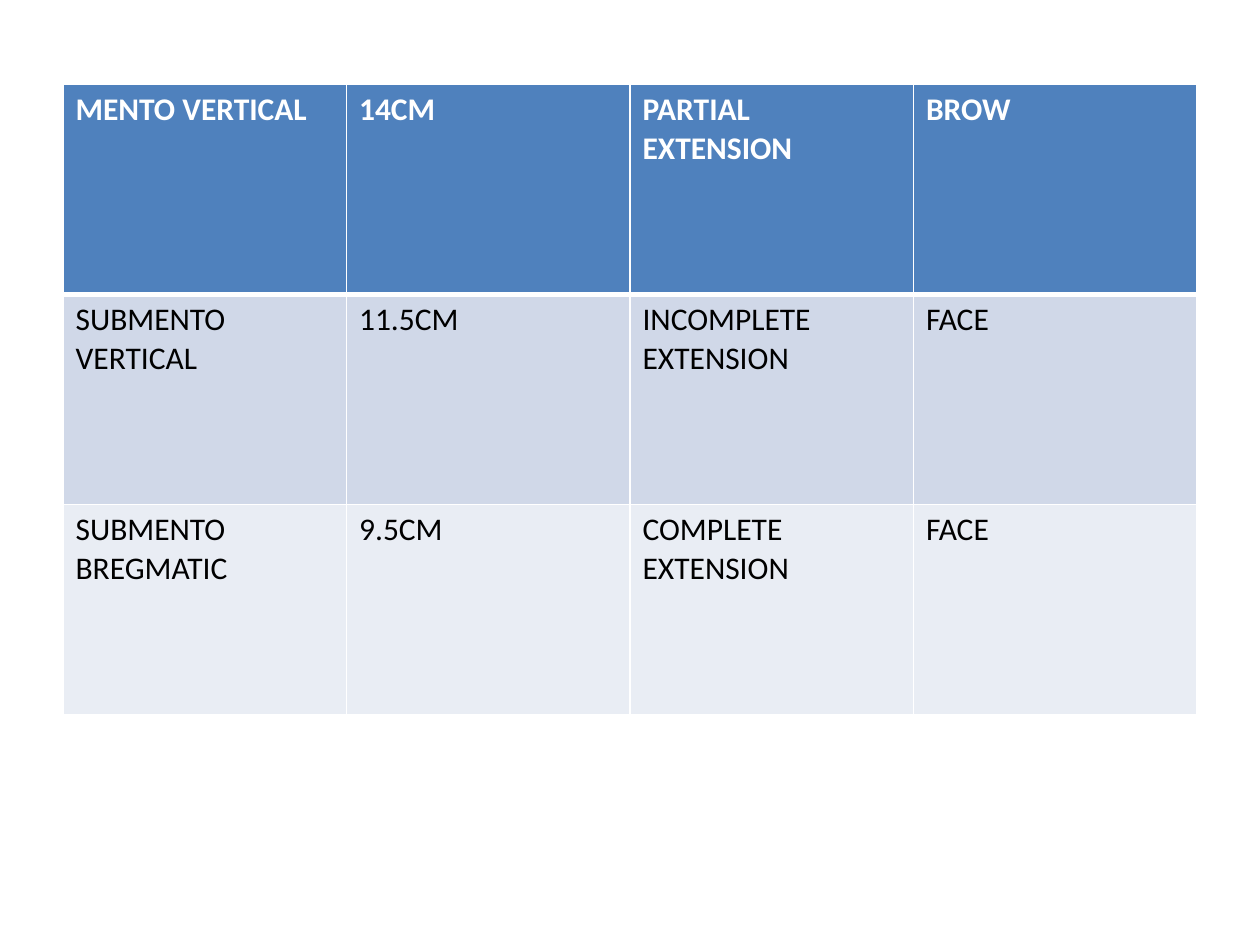
from lxml.etree import SubElement
from pptx import Presentation
from pptx.dml.color import RGBColor
from pptx.oxml.ns import qn
from pptx.util import Cm, Pt


def color(code):
    return RGBColor.from_string(code)


def border(cell, side, width):
    """Give one side (L, R, T or B) of a cell a solid white line."""
    props = cell._tc.get_or_add_tcPr()
    line = SubElement(props, qn(f"a:ln{side}"), w=str(Pt(width)))
    fill = SubElement(line, qn("a:solidFill"))
    SubElement(fill, qn("a:srgbClr"), val="FFFFFF")


rows = [
    ["MENTO VERTICAL", "14CM", "PARTIAL EXTENSION", "BROW"],
    ["SUBMENTO VERTICAL", "11.5CM", "INCOMPLETE EXTENSION", "FACE"],
    ["SUBMENTO BREGMATIC", "9.5CM", "COMPLETE EXTENSION", "FACE"],
]
fills = ["4F81BD", "D0D8E8", "E9EDF4"]

deck = Presentation()
deck.slide_width, deck.slide_height = Cm(25.4), Cm(19.05)
slide = deck.slides.add_slide(deck.slide_layouts[6])

frame = slide.shapes.add_table(
    len(rows), len(rows[0]), Cm(1.27), Cm(1.7), Cm(22.86), Cm(12.7))
table = frame.table

for r, (words, shade) in enumerate(zip(rows, fills)):
    head = r == 0
    for c, word in enumerate(words):
        cell = table.cell(r, c)
        # The rule between the header and the body is thicker.
        widths = {"L": 1, "R": 1, "T": 3 if r == 1 else 1, "B": 3 if head else 1}
        for side, width in widths.items():
            border(cell, side, width)
        cell.fill.solid()
        cell.fill.fore_color.rgb = color(shade)
        cell.text_frame.text = word
        font = cell.text_frame.paragraphs[0].runs[0].font
        font.name, font.size, font.bold = "Calibri", Pt(18), head
        font.color.rgb = color("FFFFFF" if head else "000000")

deck.save("out.pptx")
